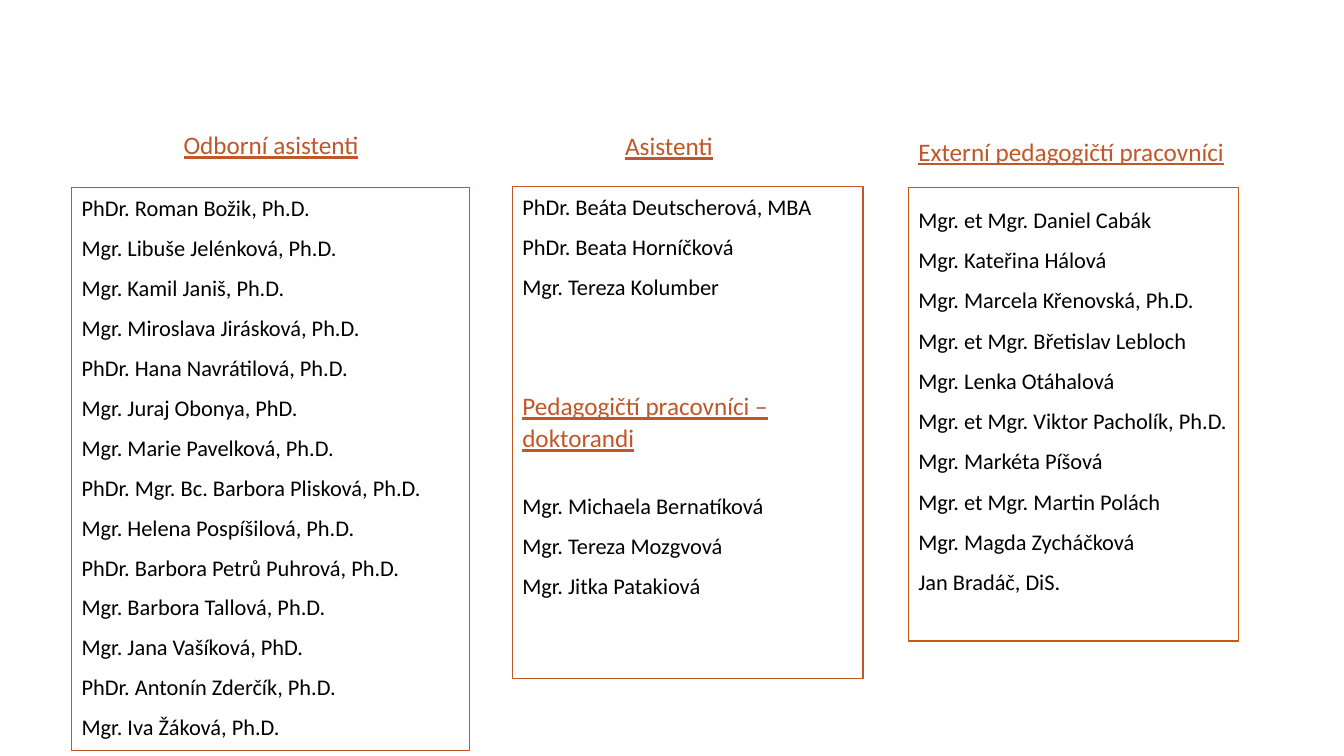
from dataclasses import dataclass

from lxml import etree
from pptx import Presentation
from pptx import util as u
from pptx.dml.color import RGBColor
from pptx.enum import text
from pptx.oxml import ns

PX = 9144  # 100 px to the inch
RUST = RGBColor(0xC0, 0x57, 0x28)
BROWN = RGBColor(0xC5, 0x5A, 0x11)
BLACK = RGBColor(0, 0, 0)
WHITE = RGBColor(255, 255, 255)
COMPARISON = 4


@dataclass
class Line:
    words: str
    head: bool = False
    before: float = 0


@dataclass
class Box:
    at: tuple[int, int, int, int]
    lines: list[Line]
    holder: int | None = None
    pitch: float = 1.07
    after: int = 8
    edge: RGBColor | None = None
    fill: RGBColor | None = None


def names(block: str) -> list[Line]:
    return [Line(row.strip()) for row in block.strip().splitlines()]


def title(words: str) -> list[Line]:
    return [Line(words, head=True)]


STAFF = names("""
    PhDr. Roman Božik, Ph.D.
    Mgr. Libuše Jelénková, Ph.D.
    Mgr. Kamil Janiš, Ph.D.
    Mgr. Miroslava Jirásková, Ph.D.
    PhDr. Hana Navrátilová, Ph.D.
    Mgr. Juraj Obonya, PhD.
    Mgr. Marie Pavelková, Ph.D.
    PhDr. Mgr. Bc. Barbora Plisková, Ph.D.
    Mgr. Helena Pospíšilová, Ph.D.
    PhDr. Barbora Petrů Puhrová, Ph.D.
    Mgr. Barbora Tallová, Ph.D.
    Mgr. Jana Vašíková, PhD.
    PhDr. Antonín Zderčík, Ph.D.
    Mgr. Iva Žáková, Ph.D.
""")
JUNIORS = names("""
    PhDr. Beáta Deutscherová, MBA
    PhDr. Beata Horníčková
    Mgr. Tereza Kolumber
""") + [
    Line("Pedagogičtí pracovníci – doktorandi", head=True, before=55),
    Line("Mgr. Michaela Bernatíková", before=18.5),
] + names("""
    Mgr. Tereza Mozgvová
    Mgr. Jitka Patakiová
""")
GUESTS = names("""
    Mgr. et Mgr. Daniel Cabák
    Mgr. Kateřina Hálová
    Mgr. Marcela Křenovská, Ph.D.
    Mgr. et Mgr. Břetislav Lebloch
    Mgr. Lenka Otáhalová
    Mgr. et Mgr. Viktor Pacholík, Ph.D.
    Mgr. Markéta Píšová
    Mgr. et Mgr. Martin Polách
    Mgr. Magda Zycháčková
    Jan Bradáč, DiS.
""")

BOXES = [
    Box((172, 127, 346, 67), title("Odborní asistenti"), 1, pitch=0.9, after=0),
    Box((71, 186, 395, 559), STAFF, 2, edge=RUST),
    Box((610, 128, 209, 49), title("Asistenti"), 3, pitch=0.9, after=0),
    Box((508, 185, 348, 488), JUNIORS, 4, edge=RUST),
    Box((901, 128, 327, 41), title("Externí pedagogičtí pracovníci")),
    Box((901, 186, 327, 450), GUESTS, pitch=1.5, after=0,
        edge=BROWN, fill=WHITE),
]


def write(para, line: Line, box: Box) -> None:
    para.text = line.words
    para.alignment = text.PP_ALIGN.LEFT
    para.line_spacing = box.pitch
    para.space_before = u.Pt(line.before)
    para.space_after = u.Pt(box.after)
    props = para._p.get_or_add_pPr()
    props.set("marL", "0")
    props.set("indent", "0")
    etree.SubElement(props, ns.qn("a:buNone"))
    font = para.font
    font.name = "Calibri"
    font.size = u.Pt(18 if line.head else 16)
    font.bold = False
    font.underline = line.head
    font.color.rgb = RUST if line.head else BLACK


def draw(slide, box: Box) -> None:
    place = [v * PX for v in box.at]
    if box.holder is None:
        shape = slide.shapes.add_textbox(*place)
    else:
        shape = slide.placeholders[box.holder]
        shape.left, shape.top, shape.width, shape.height = place
    if box.edge is not None:
        shape.line.color.rgb = box.edge
        shape.line.width = u.Pt(0.75)
    if box.fill is not None:
        shape.fill.solid()
        shape.fill.fore_color.rgb = box.fill
    frame = shape.text_frame
    frame.word_wrap = True
    frame.auto_size = text.MSO_AUTO_SIZE.NONE
    frame.vertical_anchor = text.MSO_ANCHOR.TOP
    frame.margin_right = 0
    for i, line in enumerate(box.lines):
        para = frame.add_paragraph() if i else frame.paragraphs[0]
        write(para, line, box)


def main() -> None:
    deck = Presentation()
    deck.slide_width, deck.slide_height = u.Inches(13.33), u.Inches(7.5)
    slide = deck.slides.add_slide(deck.slide_layouts[COMPARISON])
    unused = slide.shapes.title.element
    unused.getparent().remove(unused)
    for box in BOXES:
        draw(slide, box)
    deck.save("out.pptx")


if __name__ == "__main__":
    main()
